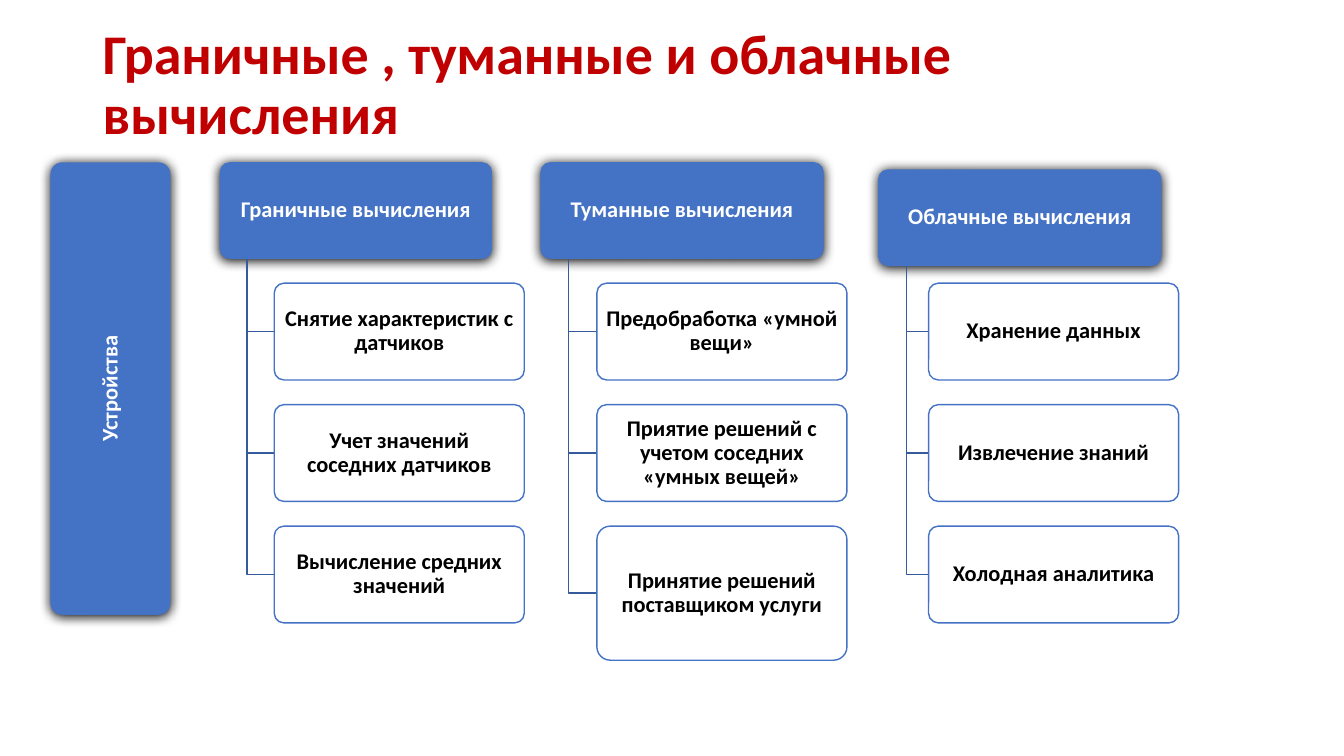
from dataclasses import dataclass

import pptx
import pptx.dml.color
import pptx.enum.shapes
import pptx.enum.text
import pptx.oxml
import pptx.oxml.ns
import pptx.util
from pptx.util import Inches


@dataclass(frozen=True)
class Theme:
    font: str = "Calibri"
    title_size: int = 40
    label_size: int = 16
    title: str = "C00000"
    accent: str = "4472C4"
    branch: str = "365B9D"
    light: str = "FFFFFF"
    dark: str = "000000"


THEME = Theme()
HEADER_TOP = 1.61
BOX_HEIGHT = 0.96
ITEM_WIDTH = 2.48
ITEM_TOP = 2.81
ITEM_PITCH = 2.41 / 2

# Each column: header text, header left, top and width, trunk x, item left,
# then (item text, item height) pairs.
COLUMNS = [
    ("Граничные вычисления", 2.18, HEADER_TOP, 2.7, 2.45, 2.72, [
        ("Снятие характеристик с датчиков", BOX_HEIGHT),
        ("Учет значений соседних датчиков", BOX_HEIGHT),
        ("Вычисление средних значений", BOX_HEIGHT),
    ]),
    ("Туманные вычисления", 5.36, HEADER_TOP, 2.81, 5.64, 5.92, [
        ("Предобработка «умной вещи»", BOX_HEIGHT),
        ("Приятие решений с учетом соседних «умных вещей»", BOX_HEIGHT),
        ("Принятие решений поставщиком услуги", 1.33),
    ]),
    ("Облачные вычисления", 8.71, 1.68, 2.81, 8.99, 9.21, [
        ("Хранение данных", BOX_HEIGHT),
        ("Извлечение знаний", BOX_HEIGHT),
        ("Холодная аналитика", BOX_HEIGHT),
    ]),
]


def rgb(value):
    return pptx.dml.color.RGBColor.from_string(value)


def write_text(box, text, size, color, align, inset_x, inset_y):
    frame = box.text_frame
    frame.text = text
    frame.word_wrap = True
    frame.vertical_anchor = pptx.enum.text.MSO_ANCHOR.MIDDLE
    frame.margin_left = frame.margin_right = Inches(inset_x)
    frame.margin_top = frame.margin_bottom = Inches(inset_y)
    para = frame.paragraphs[0]
    para.alignment = align
    para.line_spacing = 0.9
    font = para.runs[0].font
    font.name = THEME.font
    font.size = pptx.util.Pt(size)
    font.bold = True
    font.color.rgb = rgb(color)


def add_title(page, text):
    box = page.shapes.add_textbox(Inches(0.92), Inches(0.13), Inches(11.5), Inches(1.45))
    write_text(box, text, THEME.title_size, THEME.title,
               pptx.enum.text.PP_ALIGN.LEFT, 0.1, 0.05)


def add_rounded_box(page, text, left, top, width, height, fill, color):
    box = page.shapes.add_shape(
        pptx.enum.shapes.MSO_SHAPE.ROUNDED_RECTANGLE,
        Inches(left), Inches(top), Inches(width), Inches(height))
    box.adjustments[0] = 0.1
    box.shadow.inherit = False
    box.fill.solid()
    box.fill.fore_color.rgb = rgb(fill)
    write_text(box, text, THEME.label_size, color,
               pptx.enum.text.PP_ALIGN.CENTER, 0.05, 0.05)
    return box


def add_header(page, text, left, top, width, height):
    """Add a blue box with a soft black shadow."""
    box = add_rounded_box(page, text, left, top, width, height, THEME.accent, THEME.light)
    box.line.fill.background()
    effects = box._element.spPr.find(pptx.oxml.ns.qn("a:effectLst"))
    effects.append(pptx.oxml.parse_xml(
        f'<a:outerShdw {pptx.oxml.ns.nsdecls("a")} blurRad="{pptx.util.Pt(8.5)}"'
        f' dist="{pptx.util.Pt(1)}" dir="5400000" algn="ctr" rotWithShape="0">'
        f'<a:srgbClr val="{THEME.dark}"/></a:outerShdw>'))
    return box


def add_item(page, text, left, top, height):
    """Add an outlined box with a slightly transparent white fill."""
    box = add_rounded_box(page, text, left, top, ITEM_WIDTH, height, THEME.light, THEME.dark)
    box.line.color.rgb = rgb(THEME.accent)
    box.line.width = pptx.util.Pt(1)
    color = box._element.spPr.find(pptx.oxml.ns.qn("a:solidFill"))[0]
    color.append(pptx.oxml.parse_xml(
        f'<a:alpha {pptx.oxml.ns.nsdecls("a")} val="90000"/>'))


def add_branch(page, trunk, start, end, item_left):
    """Draw an elbow down the trunk and across to an item."""
    builder = page.shapes.build_freeform(Inches(trunk), Inches(start))
    builder.add_line_segments(
        [(Inches(trunk), Inches(end)), (Inches(item_left), Inches(end))], close=False)
    branch = builder.convert_to_shape()
    branch.shadow.inherit = False
    branch.fill.background()
    branch.line.color.rgb = rgb(THEME.branch)
    branch.line.width = pptx.util.Pt(1)


def add_column(page, header, left, top, width, trunk, item_left, items):
    add_header(page, header, left, top, width, BOX_HEIGHT)
    for row, (text, height) in enumerate(items):
        item_top = ITEM_TOP + row * ITEM_PITCH
        add_branch(page, trunk, top + BOX_HEIGHT, item_top + height / 2, item_left)
        add_item(page, text, item_left, item_top, height)


def main():
    deck = pptx.Presentation()
    deck.slide_width, deck.slide_height = Inches(13.33), Inches(7.5)
    page = deck.slides.add_slide(deck.slide_layouts[6])
    add_title(page, "Граничные , туманные и облачные вычисления")
    devices = add_header(page, "Устройства", 0.5, HEADER_TOP, 1.19, 4.49)
    devices.text_frame._txBody.bodyPr.set("vert", "vert270")
    for column in COLUMNS:
        add_column(page, *column)
    deck.save("out.pptx")


if __name__ == "__main__":
    main()
